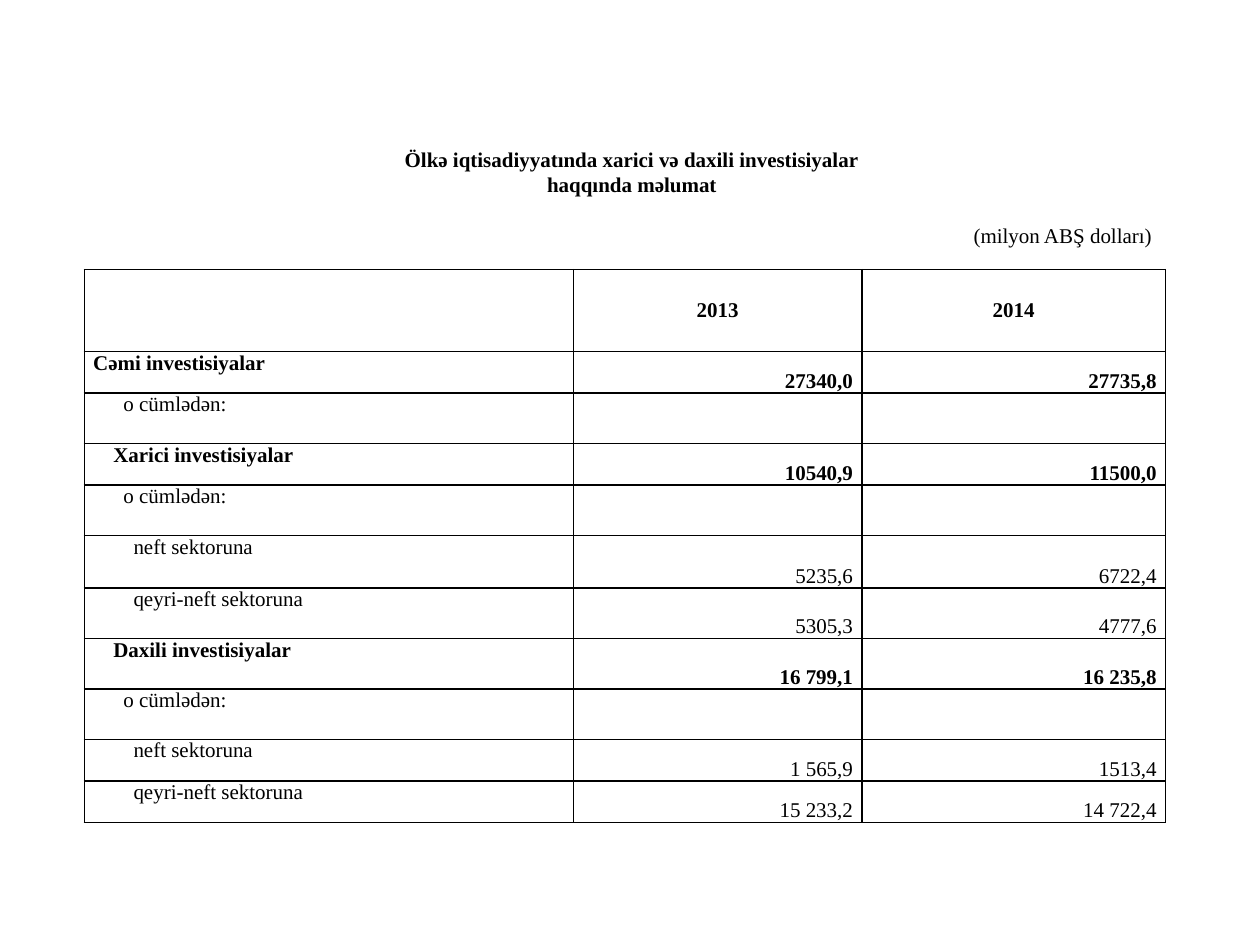
"""Build a slide with a table of foreign and domestic investment."""
from dataclasses import dataclass

from lxml import etree
from pptx import Presentation
from pptx.dml.color import RGBColor
from pptx.enum.text import MSO_ANCHOR, MSO_AUTO_SIZE, PP_ALIGN
from pptx.oxml.ns import qn
from pptx.util import Inches, Pt

LEFT, MID, RIGHT = PP_ALIGN.LEFT, PP_ALIGN.CENTER, PP_ALIGN.RIGHT
TOP, CENTRE, BASE = MSO_ANCHOR.TOP, MSO_ANCHOR.MIDDLE, MSO_ANCHOR.BOTTOM
FIXED = MSO_AUTO_SIZE.NONE
WIDE, HIGH = Inches(10), Inches(7.5)


@dataclass(frozen=True)
class Theme:
    """Hold the type, colours and spacing of the slide."""
    font: str = "Times New Roman"
    size: int = Pt(12)
    ink: str = "000000"
    line: int = Pt(1)
    pad: int = Inches(0.07)
    step: int = Inches(0.08)
    first: int = Inches(0.49)


THEME = Theme()
TITLE = "Ölkə iqtisadiyyatında xarici və daxili investisiyalar\nhaqqında məlumat"
UNIT = "(milyon ABŞ dolları)"
COLS = (38.8, 22.9, 24.1)
HEAD, LOW, TALL, DEEP = 8.67, 4.4, 5.33, 5.6
YEARS = ("", "2013", "2014")
ROWS = (
    (LOW, 0, True, ("Cəmi investisiyalar", "27340,0", "27735,8")),
    (TALL, 3, False, ("o cümlədən:", "", "")),
    (LOW, 2, True, ("Xarici investisiyalar", "10540,9", "11500,0")),
    (TALL, 3, False, ("o cümlədən:", "", "")),
    (DEEP, 4, False, ("neft sektoruna", "5235,6", "6722,4")),
    (TALL, 4, False, ("qeyri-neft sektoruna", "5305,3", "4777,6")),
    (TALL, 2, True, ("Daxili investisiyalar", "16 799,1", "16 235,8")),
    (TALL, 3, False, ("o cümlədən:", "", "")),
    (LOW, 4, False, ("neft sektoruna", "1 565,9", "1513,4")),
    (LOW, 4, False, ("qeyri-neft sektoruna", "15 233,2", "14 722,4")),
)


def across(part):
    """Turn a percentage of the slide's width into a length."""
    return round(WIDE * part / 100)


def down(part):
    """Turn a percentage of the slide's height into a length."""
    return round(HIGH * part / 100)


def area(left, top, width, height):
    """Turn four percentages into a position and size."""
    return across(left), down(top), across(width), down(height)


def style(frame, text, align, bold=False, left=0, first=0):
    """Write text in a frame and format its paragraphs."""
    frame.text = text
    for para in frame.paragraphs:
        para.alignment = align
        props = para._p.get_or_add_pPr()
        props.set("marL", str(left))
        props.set("indent", str(first))
        for run in para.runs:
            font = run.font
            font.name, font.size, font.bold = THEME.font, THEME.size, bold
            font.color.rgb = RGBColor.from_string(THEME.ink)


def border(cell):
    """Draw a thin line on each side of a cell."""
    props = cell._tc.get_or_add_tcPr()
    for spot, side in enumerate(("lnL", "lnR", "lnT", "lnB")):
        line = etree.Element(qn(f"a:{side}"), w=str(THEME.line))
        fill = etree.SubElement(line, qn("a:solidFill"))
        etree.SubElement(fill, qn("a:srgbClr"), val=THEME.ink)
        props.insert(spot, line)


def fill_cell(cell, text, align, anchor, bold, level=0):
    """Fill one table cell with text and give it borders."""
    cell.fill.background()
    cell.margin_left = cell.margin_right = THEME.pad
    cell.margin_top = cell.margin_bottom = 0
    cell.vertical_anchor = anchor
    style(cell.text_frame, text, align, bold, level * THEME.step)
    border(cell)


def add_title(slide):
    """Place the heading in the title placeholder."""
    title = slide.shapes.title
    title.left, title.top, title.width, title.height = area(15.4, 14.8, 64.6, 12.13)
    frame = title.text_frame
    frame.auto_size, frame.word_wrap = FIXED, True
    frame.vertical_anchor = TOP
    style(frame, TITLE, MID, True, first=THEME.first)


def add_unit(slide):
    """Place the unit of measure above the table."""
    frame = slide.shapes.add_textbox(*area(69.7, 22.93, 24.4, 4)).text_frame
    frame.word_wrap = True
    style(frame, UNIT, MID, first=THEME.first)


def add_grid(slide):
    """Build the table of investment by year."""
    sizes = [HEAD] + [row[0] for row in ROWS]
    place = area(6.7, 28.53, sum(COLS), sum(sizes))
    table = slide.shapes.add_table(len(sizes), len(COLS), *place).table
    table.first_row = table.horz_banding = False
    for col, part in zip(table.columns, COLS):
        col.width = across(part)
    for row, part in zip(table.rows, sizes):
        row.height = down(part)
    for col, year in enumerate(YEARS):
        fill_cell(table.cell(0, col), year, MID, CENTRE, True)
    for num, (_, level, bold, (label, *values)) in enumerate(ROWS, 1):
        fill_cell(table.cell(num, 0), label, LEFT, TOP, bold, level)
        for col, value in enumerate(values, 1):
            fill_cell(table.cell(num, col), value, RIGHT, BASE, bold)


def main():
    """Build and save the slide."""
    deck = Presentation()
    deck.slide_width, deck.slide_height = WIDE, HIGH
    slide = deck.slides.add_slide(deck.slide_layouts.get_by_name("Title Only"))
    add_grid(slide)
    add_title(slide)
    add_unit(slide)
    deck.save("out.pptx")


if __name__ == "__main__":
    main()
